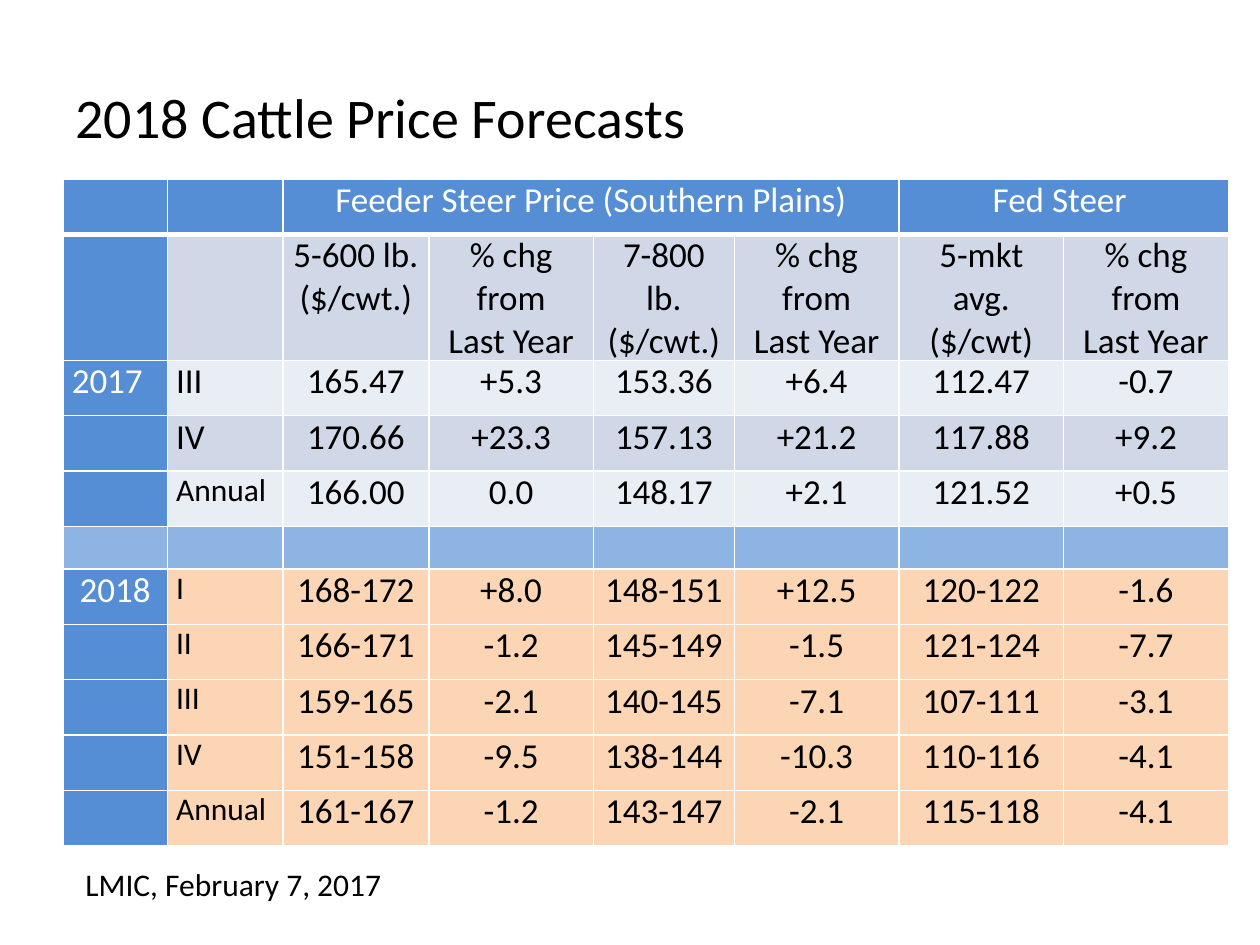
from lxml.etree import SubElement
from pptx import Presentation
from pptx.dml.color import RGBColor
from pptx.enum.text import MSO_ANCHOR, PP_ALIGN
from pptx.oxml.ns import qn
from pptx.util import Inches, Pt

COLORS = {
    "header": "558ED5",
    "divider": "8EB4E3",
    "band_dark": "D0D8E8",
    "band_light": "E9EDF4",
    "forecast": "FCD5B5",
    "white": "FFFFFF",
    "black": "000000",
}
FONT = "Calibri"
COLUMN_SHARES = [83, 92, 116, 131, 112, 131, 131, 131]
ROW_SHARES = [1, 2, 1, 1, 1, 0.77, 1, 1, 1, 1, 1]
CHANGE = "% chg from\nLast Year"
ROWS = [
    ("header", ["", "", "Feeder Steer Price (Southern Plains)", "", "", "", "Fed Steer ", ""]),
    ("band_dark", ["", "", "5-600 lb.\n($/cwt.)", CHANGE, "7-800 lb.\n($/cwt.)", CHANGE,
                   "5-mkt avg.\n($/cwt)", CHANGE]),
    ("band_light", ["2017", "III", "165.47", "+5.3", "153.36", "+6.4", "112.47", "-0.7"]),
    ("band_dark", ["", "IV", "170.66", "+23.3", "157.13", "+21.2", "117.88", "+9.2"]),
    ("band_light", ["", "Annual", "166.00", "0.0", "148.17", "+2.1", "121.52", "+0.5"]),
    ("divider", [""] * 8),
    ("forecast", [" 2018", "I", "168-172", "+8.0", "148-151", "+12.5", "120-122", "-1.6"]),
    ("forecast", ["", "II", "166-171", "-1.2", "145-149", "-1.5", "121-124", "-7.7"]),
    ("forecast", ["", "III", "159-165", "-2.1", "140-145", "-7.1", "107-111", "-3.1"]),
    ("forecast", ["", "IV", "151-158", "-9.5", "138-144", "-10.3", "110-116", "-4.1"]),
    ("forecast", ["", "Annual", "161-167", "-1.2", "143-147", "-2.1", "115-118", "-4.1"]),
]
FIRST_SMALL_LABEL_ROW = 4


def percent_box(deck, left, top, width, height):
    return (int(deck.slide_width * left / 100), int(deck.slide_height * top / 100),
            int(deck.slide_width * width / 100), int(deck.slide_height * height / 100))


def style_text(frame, size, color, align=PP_ALIGN.LEFT):
    for para in frame.paragraphs:
        para.alignment = align
        for span in para.runs:
            span.font.name = FONT
            span.font.size = Pt(size)
            span.font.bold = False
            span.font.color.rgb = RGBColor.from_string(COLORS[color])


def add_label(page, box, text, size, anchor=MSO_ANCHOR.TOP):
    frame = page.shapes.add_textbox(*box).text_frame
    frame.word_wrap = True
    frame.vertical_anchor = anchor
    frame.text = text
    style_text(frame, size, "black")


def add_borders(cell, bottom_width):
    properties = cell._tc.get_or_add_tcPr()
    for side, width in (("L", 1), ("R", 1), ("T", 1), ("B", bottom_width)):
        line = SubElement(properties, qn(f"a:ln{side}"), w=str(Pt(width)))
        fill = SubElement(line, qn("a:solidFill"))
        SubElement(fill, qn("a:srgbClr"), val=COLORS["white"])


def style_cell(cell, text, row, column, row_fill):
    in_header = row == 0 or (column == 0 and row_fill != "divider")
    cell.margin_left = cell.margin_right = Inches(0.07)
    cell.margin_top = cell.margin_bottom = 0
    add_borders(cell, 3 if row == 0 else 1)
    cell.fill.solid()
    cell.fill.fore_color.rgb = RGBColor.from_string(COLORS["header" if in_header else row_fill])
    cell.text_frame.text = text
    size = 18 if column == 1 and row >= FIRST_SMALL_LABEL_ROW else 20
    style_text(cell.text_frame, size, "white" if in_header else "black",
               PP_ALIGN.CENTER if column > 1 else PP_ALIGN.LEFT)


def add_price_table(page, box):
    left, top, width, height = box
    table = page.shapes.add_table(len(ROWS), len(COLUMN_SHARES), *box).table
    table.first_row = table.horz_banding = False
    for column, share in zip(table.columns, COLUMN_SHARES):
        column.width = int(width * share / sum(COLUMN_SHARES))
    for row, share in zip(table.rows, ROW_SHARES):
        row.height = int(height * share / sum(ROW_SHARES))
    for row, (row_fill, texts) in enumerate(ROWS):
        for column, text in enumerate(texts):
            style_cell(table.cell(row, column), text, row, column, row_fill)
    for first, last in ((2, 5), (6, 7)):
        table.cell(0, first).merge(table.cell(0, last))


def main():
    deck = Presentation()
    deck.slide_width, deck.slide_height = Inches(10), Inches(7.5)
    page = deck.slides.add_slide(deck.slide_layouts[6])
    add_label(page, percent_box(deck, 5, 4, 90, 16.67), "2018 Cattle Price Forecasts",
              32, MSO_ANCHOR.MIDDLE)
    add_price_table(page, percent_box(deck, 5, 18.93, 92.5, 69))
    add_label(page, percent_box(deck, 5.8, 90.93, 30.8, 5.33), "LMIC, February 7, 2017", 18)
    deck.save("out.pptx")


if __name__ == "__main__":
    main()
